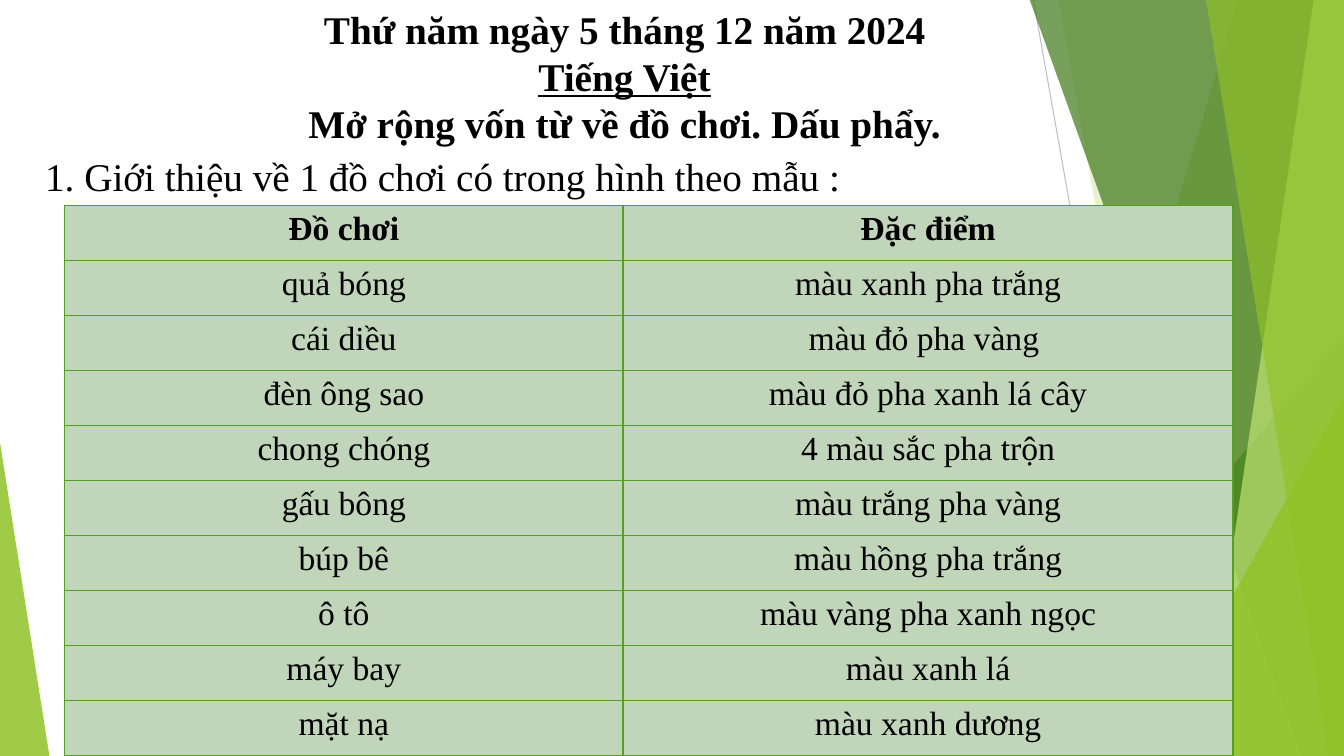
from dataclasses import dataclass

from lxml import etree
from pptx import Presentation
from pptx.dml.color import RGBColor
from pptx.enum.shapes import MSO_CONNECTOR, MSO_SHAPE
from pptx.enum.text import MSO_ANCHOR, PP_ALIGN
from pptx.oxml.ns import qn
from pptx.util import Inches, Pt

STRAIGHT = MSO_CONNECTOR.STRAIGHT
TRIANGLE = MSO_SHAPE.ISOSCELES_TRIANGLE
CENTER, LEFT = PP_ALIGN.CENTER, PP_ALIGN.LEFT
TOP = MSO_ANCHOR.TOP


@dataclass(frozen=True)
class Theme:
    font: str = "Times New Roman"
    text: str = "000000"
    lime: str = "90C226"
    green: str = "54A021"
    forest: str = "3F7819"
    pale: str = "C0E474"
    cell: str = "C1D5BA"
    heading_size: int = 28
    table_size: int = 24


theme = Theme()
WIDTH, HEIGHT = 13.33, 7.5


def paint(shape, color, opacity):
    """Fill a decoration with a translucent colour and no outline."""
    shape.shadow.inherit = False
    shape.line.fill.background()
    shape.fill.solid()
    shape.fill.fore_color.rgb = RGBColor.from_string(color)
    srgb = shape.fill._xPr.find(".//" + qn("a:srgbClr"))
    etree.SubElement(srgb, qn("a:alpha"), val=str(opacity * 1000))


def write(paragraph, text, align, size, **formats):
    paragraph.alignment = align
    run = paragraph.add_run()
    run.text = text
    run.font.color.rgb = RGBColor.from_string(theme.text)
    for name, value in {"name": theme.font, "size": Pt(size), **formats}.items():
        setattr(run.font, name, value)


prs = Presentation()
prs.slide_width, prs.slide_height = Inches(WIDTH), Inches(HEIGHT)
slide = prs.slides.add_slide(prs.slide_layouts[6])
shapes = slide.shapes

# Thin grey rays behind the green bands
rays = [(10.25, 0, 11.58, HEIGHT, "BFBFBF"), (WIDTH, 4.03, 8.12, HEIGHT, "D9D9D9")]
for x1, y1, x2, y2, color in rays:
    ray = shapes.add_connector(STRAIGHT, Inches(x1), Inches(y1), Inches(x2), Inches(y2))
    ray.line.color.rgb = RGBColor.from_string(color)
    ray.line.width = Pt(0.75)
    etree.SubElement(ray._element.spPr, qn("a:effectLst"))

# Bands reach the right edge: ("band", top x, bottom x, colour, opacity)
# Wedges stand on the bottom edge: ("wedge", left, width, height, apex, colour, opacity)
decorations = [
    ("band", 12.28, 10.04, theme.lime, 30),
    ("band", 10.5, 11.83, theme.lime, 20),
    ("wedge", 9.77, 3.56, 4.17, 1, theme.green, 72),
    ("band", 10.21, 12.91, theme.forest, 70),
    ("band", 13.03, 11.92, theme.pale, 70),
    ("band", 11.96, 13.18, theme.lime, 65),
    ("wedge", 11.34, 1.99, 3.57, 1, theme.lime, 80),
    ("wedge", 0, 0.49, 3.11, 0, theme.lime, 85),
]
for kind, *geometry, color, opacity in decorations:
    if kind == "band":
        top_x, bottom_x = geometry
        outline = shapes.build_freeform(Inches(top_x), Inches(-0.01))
        corners = [(WIDTH, -0.01), (WIDTH, HEIGHT), (bottom_x, HEIGHT)]
        outline.add_line_segments([(Inches(x), Inches(y)) for x, y in corners])
        decoration = outline.convert_to_shape()
    else:
        left, width, height, apex = geometry
        decoration = shapes.add_shape(TRIANGLE, Inches(left), Inches(HEIGHT - height),
                                      Inches(width), Inches(height))
        decoration.adjustments[0] = apex
    paint(decoration, color, opacity)

# Toys and their features
toys = [
    ("Đồ chơi", "Đặc điểm"),
    ("quả bóng", "màu xanh pha trắng"),
    ("cái diều", "màu đỏ pha vàng "),
    ("đèn ông sao", "màu đỏ pha xanh lá cây"),
    ("chong chóng", "4 màu sắc pha trộn"),
    ("gấu bông", "màu trắng pha vàng"),
    ("búp bê", "màu hồng pha trắng"),
    ("ô tô", "màu vàng pha xanh ngọc"),
    ("máy bay", "màu xanh lá"),
    ("mặt nạ", "màu xanh dương"),
]
table_height = 5.46
toy_table = shapes.add_table(len(toys), 2, Inches(0.64), Inches(2.04),
                             Inches(11.59), Inches(table_height)).table
for column, width in zip(toy_table.columns, (5.54, 6.05)):
    column.width = Inches(width)
cell_format = {"vertical_anchor": TOP}
cell_format.update({f"margin_{side}": Inches(0.05) for side in ("left", "right", "top", "bottom")})
for row_index, toy in enumerate(toys):
    toy_table.rows[row_index].height = Inches(table_height / len(toys))
    for column_index, text in enumerate(toy):
        cell = toy_table.cell(row_index, column_index)
        for name, value in cell_format.items():
            setattr(cell, name, value)
        write(cell.text_frame.paragraphs[0], text, CENTER, theme.table_size,
              bold=row_index == 0)
        properties = cell._tc.get_or_add_tcPr()
        for edge in ("lnL", "lnR", "lnT", "lnB"):
            border = etree.SubElement(properties, qn("a:" + edge), w=str(Pt(1)))
            border_fill = etree.SubElement(border, qn("a:solidFill"))
            etree.SubElement(border_fill, qn("a:srgbClr"), val=theme.green)
        cell.fill.solid()
        cell.fill.fore_color.rgb = RGBColor.from_string(theme.cell)

# Lesson heading and task
lesson = [
    ("Thứ năm ngày 5 tháng 12 năm 2024", {"bold": True}),
    ("Tiếng Việt", {"bold": True, "underline": True}),
    ("Mở rộng vốn từ về đồ chơi. Dấu phẩy.", {"bold": True}),
]
task = [("1. Giới thiệu về 1 đồ chơi có trong hình theo mẫu :", {})]
for box, align, lines in [((2.86, 0, 6.67, 1.51), CENTER, lesson),
                          ((0.35, 1.46, 10.47, 0.57), LEFT, task)]:
    frame = shapes.add_textbox(*map(Inches, box)).text_frame
    frame.word_wrap = True
    for index, (text, formats) in enumerate(lines):
        paragraph = frame.add_paragraph() if index else frame.paragraphs[0]
        write(paragraph, text, align, theme.heading_size, **formats)

prs.save("out.pptx")
